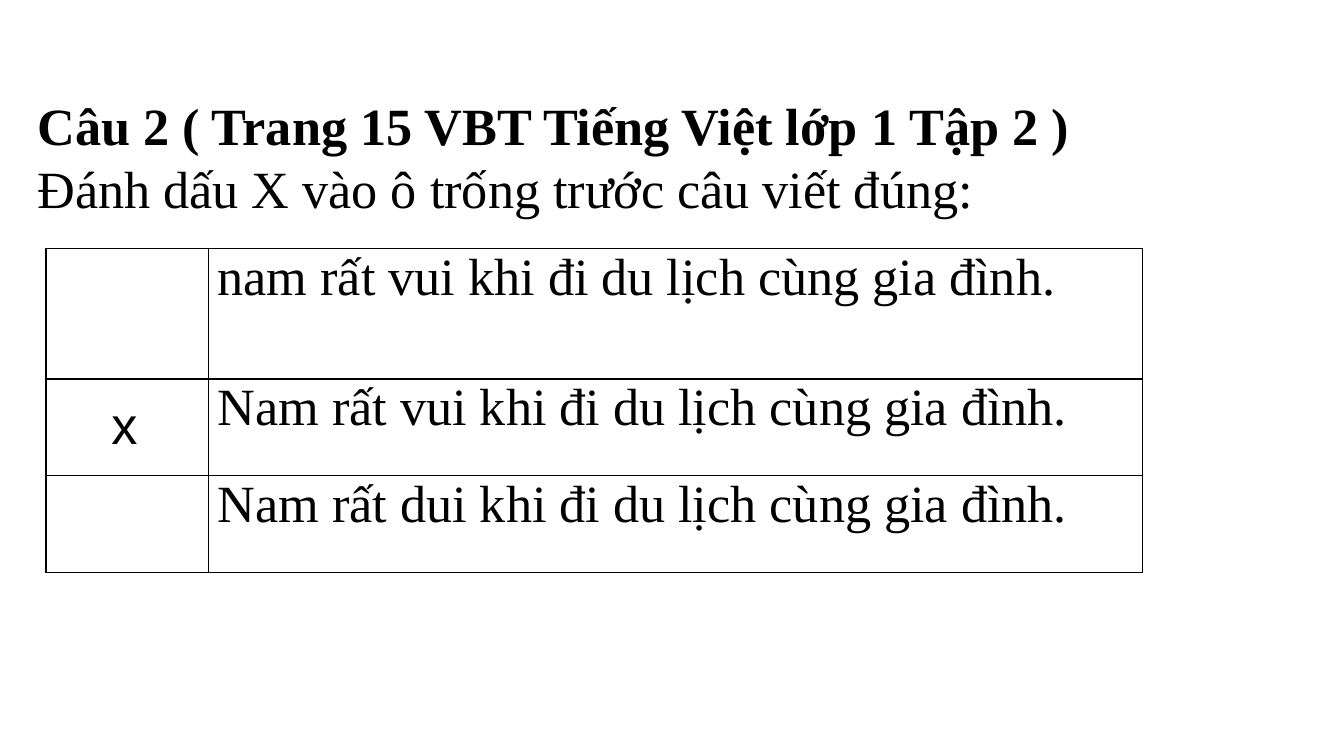
from lxml.etree import SubElement as Sub
from pptx import Presentation as Deck
from pptx.dml.color import RGBColor as Rgb
from pptx.enum.text import MSO_ANCHOR as Anchor, MSO_AUTO_SIZE as Fit, PP_ALIGN as Align
from pptx.oxml.ns import qn
from pptx.util import Inches, Pt

HUES = {"ink": "000000", "page": "FFFFFF"}
WIDE = 10
HIGH = WIDE * 9 / 16
COLS = (1.21, 6.95)
ROWS = (0.97, 0.72, 0.72)
HEAD = ("Câu 2 ( Trang 15 VBT Tiếng Việt lớp 1 Tập 2 )",
        "Đánh dấu X vào ô trống trước câu viết đúng:")
LINES = ("nam rất vui khi đi du lịch cùng gia đình.",
         "Nam rất vui khi đi du lịch cùng gia đình.",
         "Nam rất dui khi đi du lịch cùng gia đình.")


def write(para, text, font="Times New Roman", size=28, bold=False, align=Align.JUSTIFY):
    para.alignment = align
    run = para.add_run()
    run.text = text
    run.font.name, run.font.size, run.font.bold = font, Pt(size), bold
    run.font.color.rgb = Rgb.from_string(HUES["ink"])


def frame(slide, box, anchor=Anchor.TOP):
    text = slide.shapes.add_textbox(*map(Inches, box)).text_frame
    text.word_wrap = True
    text.auto_size = Fit.SHAPE_TO_FIT_TEXT
    text.vertical_anchor = anchor
    return text


def rule(cell):
    props = cell._tc.get_or_add_tcPr()
    for spot, side in enumerate("LRTB"):
        line = props.makeelement(qn(f"a:ln{side}"), {"w": str(Pt(1))})
        fill = Sub(line, qn("a:solidFill"))
        Sub(fill, qn("a:srgbClr"), val=HUES["ink"])
        props.insert(spot, line)


def title(slide, box):
    text = frame(slide, box, Anchor.MIDDLE)
    write(text.paragraphs[0], HEAD[0], bold=True)
    write(text.add_paragraph(), HEAD[1])


def grid(slide, left, top, pick):
    box = (left, top, sum(COLS), sum(ROWS))
    table = slide.shapes.add_table(len(ROWS), len(COLS), *map(Inches, box)).table
    table.first_row = table.horz_banding = False
    for col, width in zip(table.columns, COLS):
        col.width = Inches(width)
    for row, height, line in zip(table.rows, ROWS, LINES):
        row.height = Inches(height)
        for cell in row.cells:
            cell.fill.background()
            rule(cell)
        cell = row.cells[1]
        cell.margin_left = cell.margin_right = Inches(0.07)
        cell.margin_top = cell.margin_bottom = 0
        write(cell.text_frame.paragraphs[0], line)
    mark = frame(slide, (left + 0.39, top + sum(ROWS[:pick]) + 0.05, 0.78, 0.57))
    write(mark.paragraphs[0], "x", font="Arial", align=Align.LEFT)


def main():
    deck = Deck()
    deck.slide_width, deck.slide_height = Inches(WIDE), Inches(HIGH)
    slide = deck.slides.add_slide(deck.slide_layouts[6])
    back = slide.background.fill
    back.solid()
    back.fore_color.rgb = Rgb.from_string(HUES["page"])
    grid(slide, 0.34, 1.85, pick=1)
    title(slide, (0.18, 0.64, 8.06, 1.04))
    deck.save("out.pptx")


if __name__ == "__main__":
    main()
